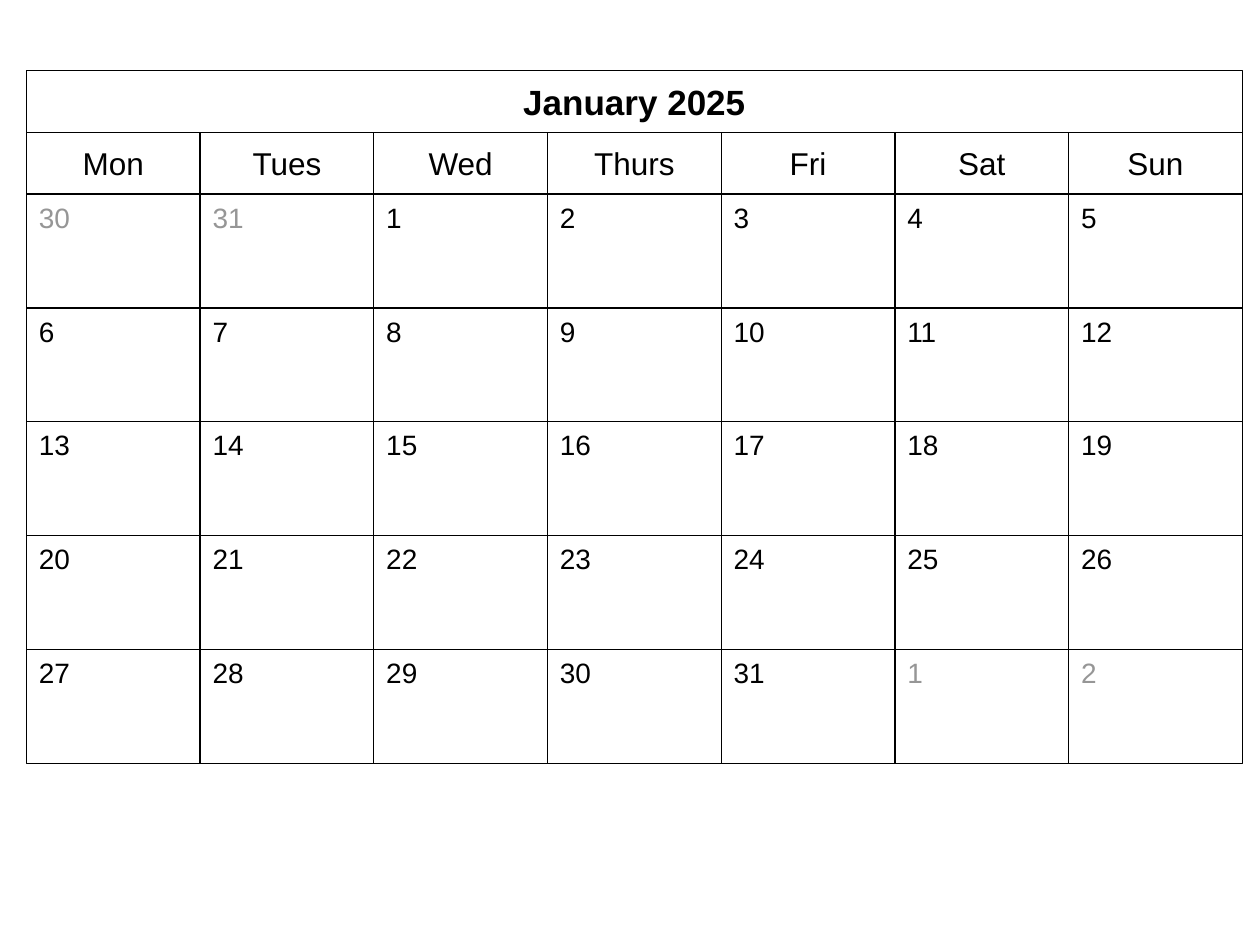
import pptx
import pptx.util
import pptx.dml.color
import pptx.enum.shapes
import pptx.enum.text

Inches = pptx.util.Inches
Pt = pptx.util.Pt
ALIGN = pptx.enum.text.PP_ALIGN
ANCHOR = pptx.enum.text.MSO_ANCHOR

COLORS = {"ink": "000000", "muted": "969696", "paper": "FFFFFF"}
WEEKDAYS = ["Mon", "Tues", "Wed", "Thurs", "Fri", "Sat", "Sun"]
PREVIOUS_MONTH, THIS_MONTH, NEXT_MONTH = [30, 31], range(1, 32), [1, 2]
WEEKS = 5


def rgb(name):
    return pptx.dml.color.RGBColor.from_string(COLORS[name])


def write_text(shape, text, size, color="ink", bold=False, align=ALIGN.LEFT,
               anchor=ANCHOR.TOP, inset=0.05):
    frame = shape.text_frame
    frame.word_wrap = True
    frame.vertical_anchor = anchor
    frame.margin_left = frame.margin_right = Inches(0.1)
    frame.margin_top = frame.margin_bottom = Inches(inset)
    paragraph = frame.paragraphs[0]
    paragraph.alignment = align
    run = paragraph.add_run()
    run.text = text
    run.font.name = "Arial"
    run.font.size = Pt(size)
    run.font.bold = bold
    run.font.color.rgb = rgb(color)


def add_cell(slide, left, top, width, height, fill=None):
    cell = slide.shapes.add_shape(
        pptx.enum.shapes.MSO_SHAPE.RECTANGLE,
        Inches(left), Inches(top), Inches(width), Inches(height))
    cell.shadow.inherit = False
    if fill:
        cell.fill.solid()
        cell.fill.fore_color.rgb = rgb(fill)
    else:
        cell.fill.background()
    cell.line.color.rgb = rgb("ink")
    cell.line.width = Pt(0.75)
    return cell


def add_heading(slide, text, left, top, width, height, **text_format):
    """Add a filled cell with centred text."""
    cell = add_cell(slide, left, top, width, height, fill="paper")
    write_text(cell, text, align=ALIGN.CENTER, anchor=ANCHOR.MIDDLE,
               inset=0.02, **text_format)


def add_weekday_row(slide, left, top, width, height):
    column = width / len(WEEKDAYS)
    for index, weekday in enumerate(WEEKDAYS):
        add_heading(slide, weekday, left + index * column, top, column, height,
                    size=18)


def add_day_grid(slide, left, top, width, height):
    column, row = width / len(WEEKDAYS), height / WEEKS
    days = ([(day, "muted") for day in PREVIOUS_MONTH]
            + [(day, "ink") for day in THIS_MONTH]
            + [(day, "muted") for day in NEXT_MONTH])
    for index, (day, color) in enumerate(days):
        week, weekday = divmod(index, len(WEEKDAYS))
        cell = add_cell(slide, left + weekday * column, top + week * row,
                        column, row)
        write_text(cell, str(day), size=16, color=color)


def main():
    deck = pptx.Presentation()
    deck.slide_width, deck.slide_height = Inches(10), Inches(7.5)
    slide = deck.slides.add_slide(deck.slide_layouts[6])
    left, width = 0.21, 9.65
    add_weekday_row(slide, left, 1.05, width, 0.49)
    add_heading(slide, "January 2025", left, 0.56, width, 0.49,
                size=20, bold=True)
    add_day_grid(slide, left, 1.54, width, 4.52)
    deck.save("out.pptx")


if __name__ == "__main__":
    main()
